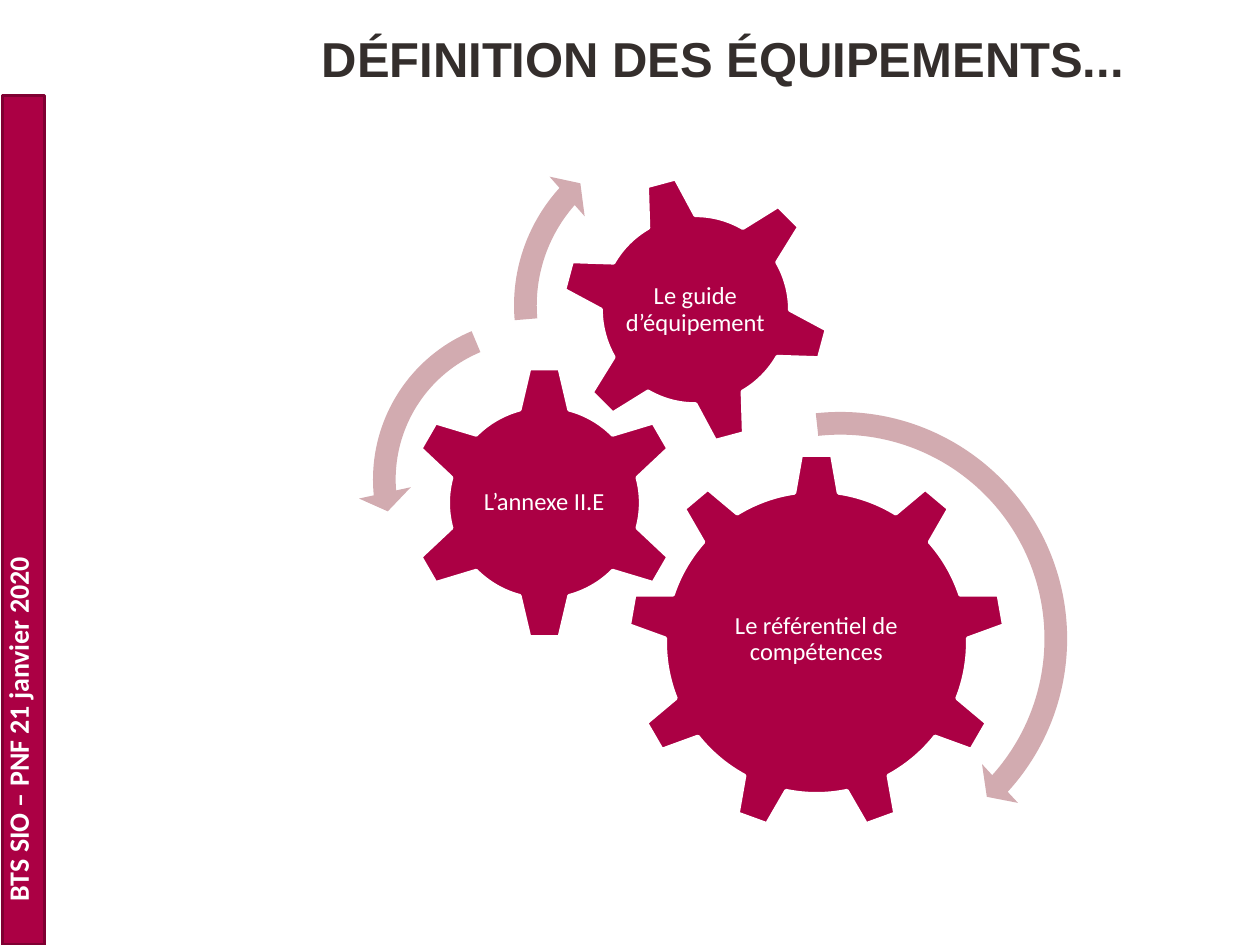
from pptx import Presentation
from pptx.dml.color import RGBColor
from pptx.enum.shapes import MSO_SHAPE
from pptx.enum.text import MSO_ANCHOR, PP_ALIGN
from pptx.util import Pt

RASPBERRY = RGBColor(0xAB, 0x00, 0x44)
DARK_RASPBERRY = RGBColor(0x7F, 0x00, 0x32)
DUSTY_PINK = RGBColor(0xD2, 0xAB, 0xB0)
CHARCOAL = RGBColor(0x34, 0x2E, 0x2C)
WHITE = RGBColor(0xFF, 0xFF, 0xFF)

RECTANGLE = MSO_SHAPE.RECTANGLE
GEAR_6 = MSO_SHAPE.GEAR_6
GEAR_9 = MSO_SHAPE.GEAR_9
CLOCKWISE = MSO_SHAPE.CIRCULAR_ARROW
COUNTERCLOCKWISE = MSO_SHAPE.LEFT_CIRCULAR_ARROW
MIDDLE, TOP = MSO_ANCHOR.MIDDLE, MSO_ANCHOR.TOP
CENTER, LEFT = PP_ALIGN.CENTER, PP_ALIGN.LEFT


def write(frame, text, size=14, font="Calibri", color=WHITE, bold=False,
          align=CENTER, anchor=MIDDLE, spacing=1.0):
    frame.word_wrap = True
    frame.vertical_anchor = anchor
    paragraph = frame.paragraphs[0]
    paragraph.alignment = align
    paragraph.line_spacing = spacing
    run = paragraph.add_run()
    run.text = text
    run.font.size = Pt(size)
    run.font.name = font
    run.font.bold = bold
    run.font.color.rgb = color


class GearSlide:
    def __init__(self, slide):
        self.slide = slide
        self.line_width = Pt(2)
        self.label_inset = Pt(1.4)

    def shape(self, kind, box, fill, outline=None):
        shape = self.slide.shapes.add_shape(kind, *map(Pt, box))
        shape.shadow.inherit = False
        shape.fill.solid()
        shape.fill.fore_color.rgb = fill
        if outline is None:
            shape.line.fill.background()
        else:
            shape.line.color.rgb = outline
            shape.line.width = self.line_width
        return shape

    def text(self, box, text, **style):
        frame = self.slide.shapes.add_textbox(*map(Pt, box)).text_frame
        write(frame, text, **style)
        return frame

    def vertical_text(self, box, text, **style):
        frame = self.text(box, text, **style)
        frame._txBody.bodyPr.set("vert", "vert270")

    def gear(self, kind, left, top, size, label, label_box, rotation=0):
        gear = self.shape(kind, (left, top, size, size), RASPBERRY, WHITE)
        gear.rotation = rotation
        frame = self.text(label_box, label, spacing=0.9)
        frame.margin_left = frame.margin_right = self.label_inset
        frame.margin_top = frame.margin_bottom = self.label_inset

    def arc_arrow(self, kind, left, top, size, percents, angles):
        arrow = self.shape(kind, (left, top, size, size), DUSTY_PINK)
        thickness, head = (percent / 100 for percent in percents)
        for index, value in enumerate((thickness, *angles, head)):
            arrow.adjustments[index] = value


def main():
    deck = Presentation()
    deck.slide_width, deck.slide_height = Pt(720), Pt(540)
    page = GearSlide(deck.slides.add_slide(deck.slide_layouts[6]))

    page.shape(RECTANGLE, (1.4, 54.6, 24, 485.4), RASPBERRY, DARK_RASPBERRY)
    page.vertical_text((-3, 25, 34, 497), "BTS SIO – PNF 21 janvier 2020",
                       size=16, bold=True, align=LEFT, anchor=TOP)
    page.text((105, 0, 616, 66), "DÉFINITION DES ÉQUIPEMENTS...",
              size=28, font="Arial", color=CHARCOAL, bold=True)

    page.gear(GEAR_9, 358.6, 259.2, 216, "Le référentiel de compétences",
              (402, 310, 129, 111))
    page.gear(GEAR_6, 232.6, 208.8, 157, "L’annexe II.E",
              (272, 248.4, 78, 78))
    page.gear(GEAR_6, 320.4, 100, 154, "Le guide d’équipement",
              (354.2, 134, 86.4, 86.4), rotation=345)

    page.arc_arrow(CLOCKWISE, 342, 226.8, 276.5, (4.69, 5.47),
                   (2.99, 25.32, 158.27))
    page.arc_arrow(COUNTERCLOCKWISE, 204.5, 173.5, 200.9, (6.45, 7.53),
                   (4.3, 104.89, 148.38))
    page.arc_arrow(CLOCKWISE, 285.1, 66.2, 216.7, (5.98, 6.98),
                   (3.94, 133.14, 105.08))

    deck.save("out.pptx")


if __name__ == "__main__":
    main()
